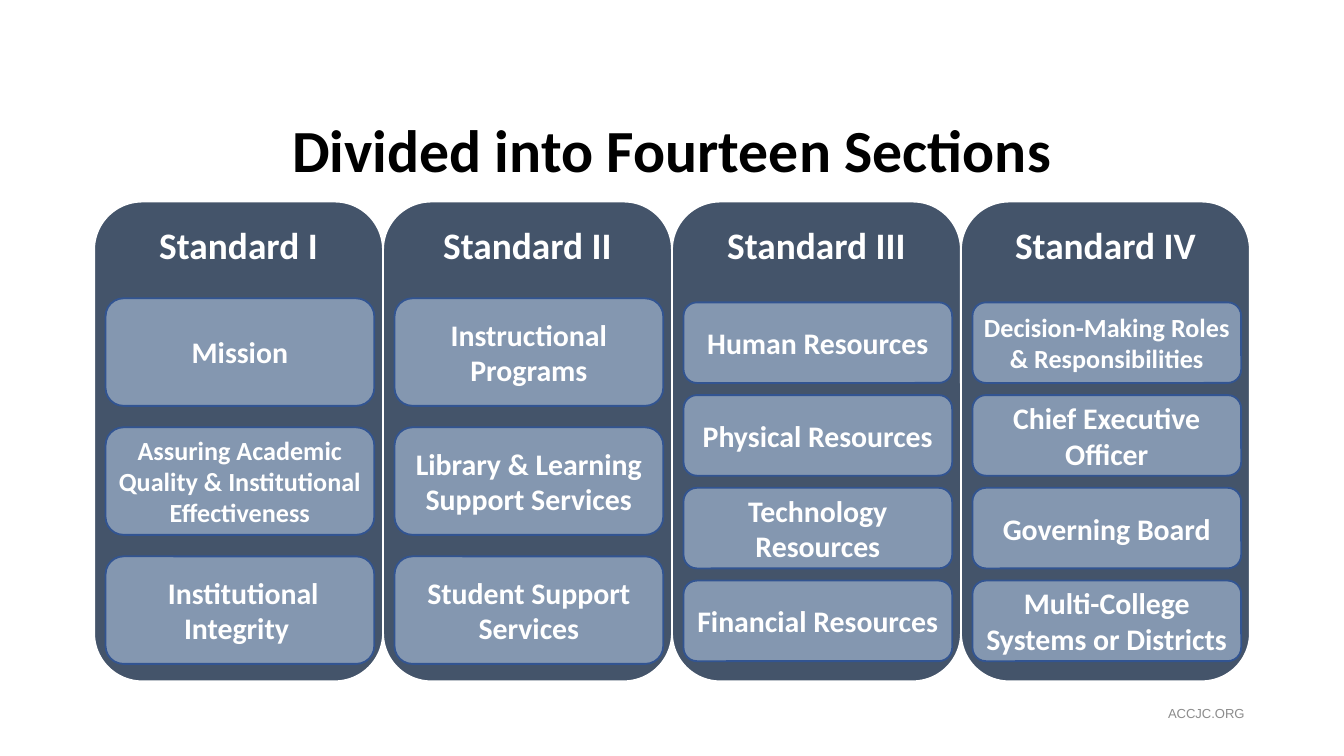
from pptx import Presentation
from pptx.dml.color import RGBColor
from pptx.enum.shapes import MSO_SHAPE as Shape
from pptx.enum.text import MSO_ANCHOR as Anchor, PP_ALIGN as Align
from pptx.util import Inches, Pt

COLORS = {"column": "44546A", "card": "8497B0", "card_edge": "325491",
          "white": "FFFFFF", "black": "000000", "footer": "8C8C8C"}
SLIDE_W = 10
SLIDE_H = SLIDE_W * 9 / 16

STANDARDS = {
    "Standard I": [("Mission", 16),
                   ("Assuring Academic Quality & Institutional Effectiveness", 14),
                   (" Institutional Integrity ", 16)],
    "Standard II": [("Instructional Programs", 16),
                    ("Library & Learning Support Services", 16),
                    ("Student Support Services", 16)],
    "Standard III": [("Human Resources", 16), ("Physical Resources", 16),
                     ("Technology Resources", 16), ("Financial Resources", 16)],
    "Standard IV": [("Decision-Making Roles & Responsibilities", 14),
                    ("Chief Executive Officer", 16), ("Governing Board", 16),
                    ("Multi-College Systems or Districts", 16)],
}
# Cards per column: first top, pitch and height, in inches from the column top
CARD_ROWS = {3: (0.72, 0.96, 0.8), 4: (0.75, 0.69, 0.6)}


def rgb(name):
    return RGBColor.from_string(COLORS[name])


def write(shape, text, size, color="white", font="Calibri", bold=True,
          align=Align.CENTER, anchor=Anchor.MIDDLE, insets=(0, 0)):
    """Fill a shape with one paragraph; insets are (sides, top and bottom)."""
    frame = shape.text_frame
    side, end = map(Inches, insets)
    layout = {"word_wrap": True, "vertical_anchor": anchor,
              "margin_left": side, "margin_right": side,
              "margin_top": end, "margin_bottom": end}
    for name, value in layout.items():
        setattr(frame, name, value)
    paragraph = frame.paragraphs[0]
    paragraph.alignment = align
    run = paragraph.add_run()
    run.text = text
    for name, value in {"name": font, "size": Pt(size), "bold": bold}.items():
        setattr(run.font, name, value)
    run.font.color.rgb = rgb(color)
    return paragraph


def add_panel(slide, box, fill, edge):
    panel = slide.shapes.add_shape(Shape.ROUNDED_RECTANGLE, *map(Inches, box))
    panel.shadow.inherit = False
    panel.fill.solid()
    panel.fill.fore_color.rgb = rgb(fill)
    panel.line.color.rgb = rgb(edge)
    panel.line.width = Pt(1)
    return panel


def add_title(slide, box):
    title = slide.shapes.title
    for name, value in zip(("left", "top", "width", "height"), box):
        setattr(title, name, Inches(value))
    heading = write(title, "Divided into Fourteen Sections", 32, "black",
                    insets=(0.07, 0.04))
    heading.line_spacing = 0.9


def add_standard(slide, box, heading, sections):
    left, top, width, _ = box
    column = add_panel(slide, box, "column", "white")
    write(column, heading, 20, anchor=Anchor.TOP, insets=(0.1, 0.05))
    first, pitch, height = CARD_ROWS[len(sections)]
    card_width = 0.93 * width
    card_left = left + (width - card_width) / 2 + 0.01
    for row, (section, size) in enumerate(sections):
        card_box = (card_left, top + first + row * pitch, card_width, height)
        write(add_panel(slide, card_box, "card", "card_edge"), section, size)


def add_standards(slide, box):
    left, top, width, height = box
    column_width = width / len(STANDARDS)
    for index, (heading, sections) in enumerate(STANDARDS.items()):
        column_box = (left + index * column_width, top, column_width, height)
        add_standard(slide, column_box, heading, sections)


def add_footer(slide, box):
    footer = slide.shapes.add_textbox(*map(Inches, box))
    write(footer, "ACCJC.ORG", 7, "footer", font="Arial", bold=False,
          align=Align.RIGHT, insets=(0.06, 0.03))


def main():
    deck = Presentation()
    deck.slide_width, deck.slide_height = Inches(SLIDE_W), Inches(SLIDE_H)
    slide = deck.slides.add_slide(deck.slide_layouts[5])
    margin = 0.07 * SLIDE_W
    content_width = SLIDE_W - 2 * margin
    add_title(slide, (margin, 0.16 * SLIDE_H, content_width, 0.48))
    add_standards(slide, (margin, 1.5, content_width, 3.57))
    add_footer(slide, (7.96, 5.21, 1.36, 0.19))
    deck.save("out.pptx")


if __name__ == "__main__":
    main()
